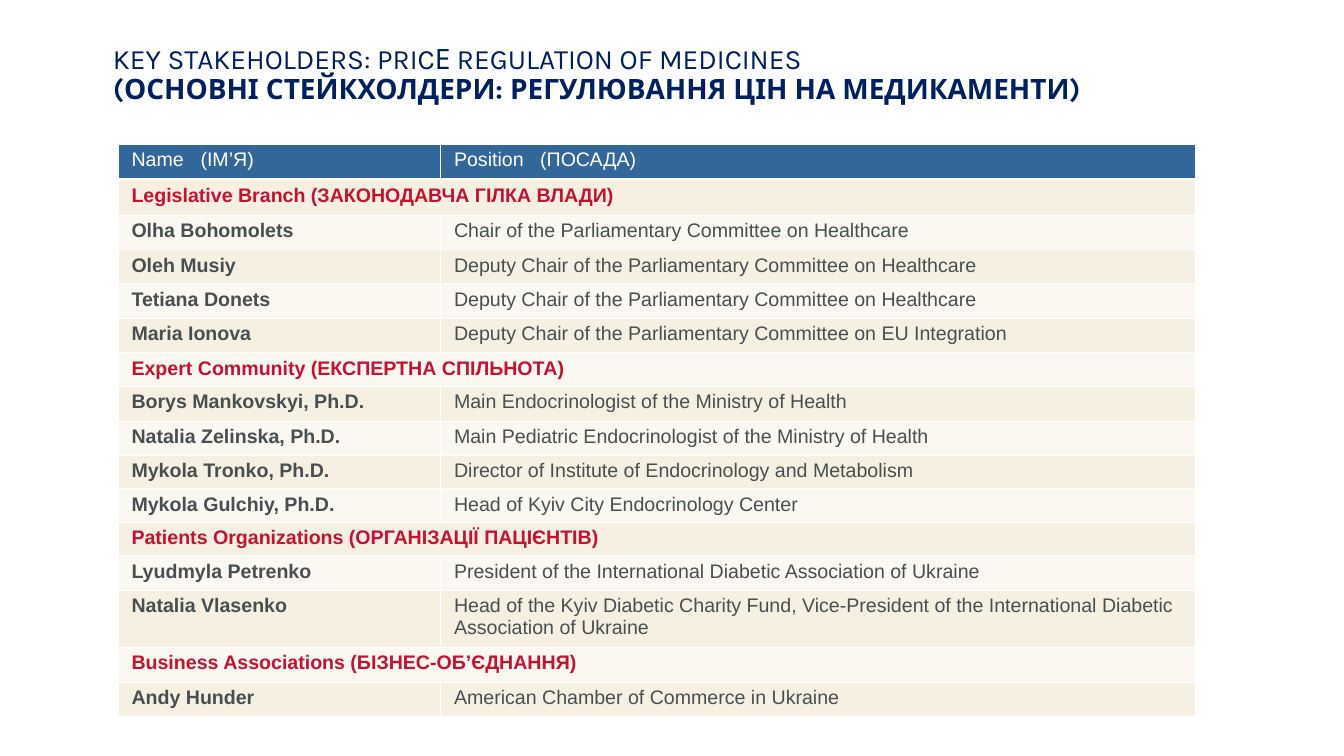
from lxml import etree
from pptx import Presentation
from pptx import util as u
from pptx.dml.color import RGBColor
from pptx.enum import text
from pptx.oxml.ns import qn

PX = 9144  # 100 px to the inch
WHITE, NAVY, BLUE, RED, GREY = "FFFFFF", "002060", "336699", "C41230", "494F50"
BANDS = ["FAF8F1", "F6F0E3"]


def style(font, color, **values):
    font.color.rgb = RGBColor.from_string(color)
    for name, value in values.items():
        setattr(font, name, value)


def border(cell, side, points):
    line = etree.SubElement(cell._tc.get_or_add_tcPr(), qn(f"a:ln{side}"), w=str(u.Pt(points)))
    fill = etree.SubElement(line, qn("a:solidFill"))
    etree.SubElement(fill, qn("a:srgbClr"), val=WHITE)


presentation = Presentation()
presentation.slide_width, presentation.slide_height = 2667 * PX, 1500 * PX
slide = presentation.slides.add_slide(presentation.slide_layouts[6])

# Title
title = slide.shapes.add_textbox(200 * PX, 78 * PX, 2334 * PX, 152 * PX)
frame = title.text_frame
frame_format = {
    "word_wrap": True, "vertical_anchor": text.MSO_ANCHOR.TOP,
    "margin_left": 24 * PX, "margin_right": 24 * PX,
    "margin_top": 12 * PX, "margin_bottom": 12 * PX,
}
for name, value in frame_format.items():
    setattr(frame, name, value)
paragraph = frame.paragraphs[0]
paragraph.line_spacing = 0.9
title_lines = [
    ("KEY STAKEHOLDERS: PRICЕ REGULATION OF MEDICINES", False),
    ("(ОСНОВНІ СТЕЙКХОЛДЕРИ: РЕГУЛЮВАННЯ ЦІН НА МЕДИКАМЕНТИ)", True),
]
for index, (line, bold) in enumerate(title_lines):
    if index:
        paragraph.add_line_break()
    run = paragraph.add_run()
    run.text = line
    style(run.font, NAVY, name="Karla", size=u.Pt(40), bold=bold)

# Stakeholder table: a row with one entry is a section heading
rows = [
    (70, "Name\t(ІМ’Я)", "Position\t(ПОСАДА)"),
    (71, "Legislative Branch (ЗАКОНОДАВЧА ГІЛКА ВЛАДИ)"),
    (68, "Olha Bohomolets", "Chair of the Parliamentary Committee on Healthcare"),
    (68, "Oleh Musiy", "Deputy Chair of the Parliamentary Committee on Healthcare"),
    (68, "Tetiana Donets", "Deputy Chair of the Parliamentary Committee on Healthcare"),
    (68, "Maria Ionova", "Deputy Chair of the Parliamentary Committee on EU Integration"),
    (63, "Expert Community (ЕКСПЕРТНА СПІЛЬНОТА)"),
    (70, "Borys Mankovskyi, Ph.D.", "Main Endocrinologist of the Ministry of Health"),
    (65, "Natalia Zelinska, Ph.D.", "Main Pediatric Endocrinologist of the Ministry of Health"),
    (65, "Mykola Tronko, Ph.D.", "Director of Institute of Endocrinology and Metabolism"),
    (65, "Mykola Gulchiy, Ph.D.", "Head of Kyiv City Endocrinology Center"),
    (65, "Patients Organizations (ОРГАНІЗАЦІЇ ПАЦІЄНТІВ)"),
    (68, "Lyudmyla Petrenko", "President of the International Diabetic Association of Ukraine"),
    (103, "Natalia Vlasenko", "Head of the Kyiv Diabetic Charity Fund, Vice-President of the "
                             "International Diabetic Association of Ukraine"),
    (69, "Business Associations (БІЗНЕС-ОБ’ЄДНАННЯ)"),
    (69, "Andy Hunder", "American Chamber of Commerce in Ukraine"),
]
column_widths = [640, 1497]
header_tabs = [137, 171]
cell_margins = {
    "margin_left": 27 * PX, "margin_right": 27 * PX,
    "margin_top": 10 * PX, "margin_bottom": 10 * PX,
}
height = sum(row[0] for row in rows)
table = slide.shapes.add_table(
    len(rows), 2, 234 * PX, 286 * PX, sum(column_widths) * PX, height * PX).table
for column, width in zip(table.columns, column_widths):
    column.width = width * PX

for row_index, (row_height, *entries) in enumerate(rows):
    table.rows[row_index].height = row_height * PX
    is_header, is_section = row_index == 0, len(entries) == 1
    if is_section:
        table.cell(row_index, 0).merge(table.cell(row_index, 1))
    for column_index in range(2):
        cell = table.cell(row_index, column_index)
        for name, value in cell_margins.items():
            setattr(cell, name, value)
        for side in "LRTB":
            border(cell, side, 3 if is_header and side == "B" else 1)
        cell.fill.solid()
        cell.fill.fore_color.rgb = RGBColor.from_string(BLUE if is_header else BANDS[row_index % 2])
        if column_index >= len(entries):
            continue
        paragraph = cell.text_frame.paragraphs[0]
        if is_header:
            tabs = etree.SubElement(paragraph._p.get_or_add_pPr(), qn("a:tabLst"))
            etree.SubElement(tabs, qn("a:tab"), pos=str(header_tabs[column_index] * PX), algn="l")
        run = paragraph.add_run()
        run.text = entries[column_index]
        color = WHITE if is_header else RED if is_section else GREY
        style(run.font, color, name="Arial", size=u.Pt(28),
              bold=not is_header and column_index == 0)

presentation.save("out.pptx")
